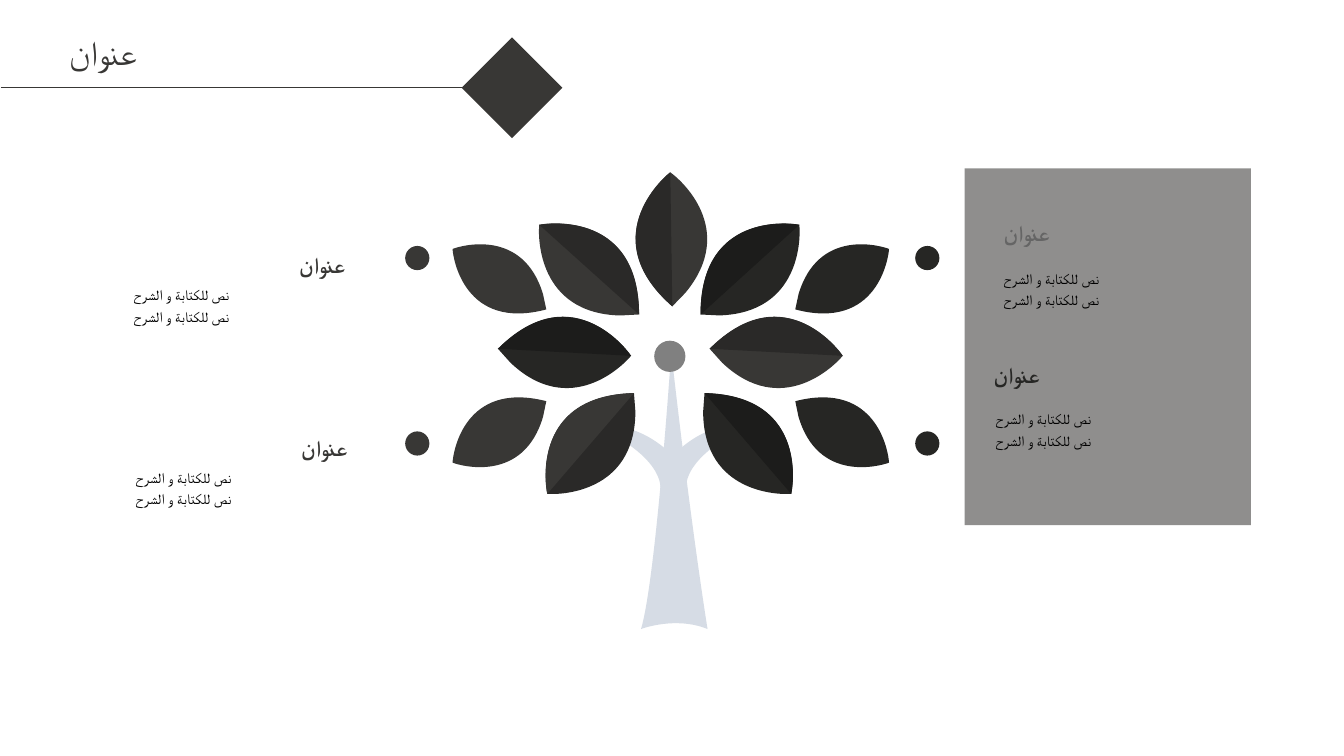
from lxml import etree
from pptx import Presentation
from pptx.dml.color import RGBColor
from pptx.enum.shapes import MSO_CONNECTOR, MSO_SHAPE
from pptx.enum.text import MSO_ANCHOR, MSO_AUTO_SIZE, PP_ALIGN
from pptx.oxml.ns import qn
from pptx.util import Inches, Pt

RECTANGLE, OVAL, DIAMOND = MSO_SHAPE.RECTANGLE, MSO_SHAPE.OVAL, MSO_SHAPE.DIAMOND
TOP, MIDDLE, BOTTOM = MSO_ANCHOR.TOP, MSO_ANCHOR.MIDDLE, MSO_ANCHOR.BOTTOM
LEFT, RIGHT, JUSTIFY = PP_ALIGN.LEFT, PP_ALIGN.RIGHT, PP_ALIGN.JUSTIFY

FONT = "Noto Sans CJK SC"
CHARCOAL = RGBColor(0x38, 0x37, 0x35)
CHARCOAL_FOLD = RGBColor(0x2A, 0x29, 0x28)
INK = RGBColor(0x26, 0x26, 0x24)
INK_FOLD = RGBColor(0x1C, 0x1C, 0x1B)
GREY = RGBColor(0x80, 0x80, 0x80)
MUTED = RGBColor(0x65, 0x65, 0x65)
TRUNK = RGBColor(0xD6, 0xDC, 0xE5)
BLACK = RGBColor(0, 0, 0)

HEADING = "عنوان"
BODY = ["نص للكتابة و الشرح"] * 2

# heading left, heading top, body left, body top, width, alignment, colour
NOTES = [
    (9.55, 3.53, 9.57, 3.99, 2.32, LEFT, INK),
    (9.65, 2.12, 9.65, 2.6, 2.32, LEFT, MUTED),
    (1.35, 4.25, 1.35, 4.57, 2.41, RIGHT, CHARCOAL),
    (1.33, 2.44, 1.33, 2.76, 2.41, RIGHT, CHARCOAL),
]

# start point, then straight (1 point) or curved (3 points) segments
TREE = [
    ((7.02, 6.24), [((7.02, 6.24), (6.86, 5.26), (6.66, 3.49)),
                    ((6.66, 3.49), (6.51, 5.74), (6.36, 6.24)),
                    ((6.36, 6.24), (6.7, 6.11), (7.02, 6.24))]),
    ((6.81, 4.86), [((6.81, 4.86), (6.73, 4.56), (7.42, 4.23)),
                    ((7.42, 4.23), (7.11, 4.14), (6.75, 4.45)),
                    ((6.81, 4.86),)]),
    ((6.55, 4.87), [((6.55, 4.87), (6.63, 4.57), (5.94, 4.24)),
                    ((5.94, 4.24), (6.25, 4.15), (6.61, 4.46)),
                    ((6.55, 4.87),)]),
]

# base, tip, side of the fold (1 left of the way to the tip), fill, fold fill
LEAVES = [
    ((6.67, 3.04), (6.65, 1.71), 1, CHARCOAL, CHARCOAL_FOLD),
    ((6.99, 3.9), (7.85, 4.9), 1, INK, INK_FOLD),
    ((6.29, 3.9), (5.43, 4.9), -1, CHARCOAL_FOLD, CHARCOAL),
    ((7.04, 3.46), (8.36, 3.53), 1, CHARCOAL, CHARCOAL_FOLD),
    ((4.94, 3.46), (6.26, 3.53), 1, INK, INK_FOLD),
    ((6.95, 3.12), (7.93, 2.23), 1, INK, INK_FOLD),
    ((6.34, 3.12), (5.35, 2.23), -1, CHARCOAL, CHARCOAL_FOLD),
    ((7.89, 3.98), (8.82, 4.59), 1, INK, None),
    ((5.42, 3.98), (4.49, 4.59), -1, CHARCOAL, None),
    ((7.89, 3.07), (8.82, 2.47), -1, INK, None),
    ((5.42, 3.07), (4.49, 2.47), 1, CHARCOAL, None),
]

# leaf outlines as (share of the length, offset towards the fold)
LEAF_OUTLINE = [((0.51, 0.56), (0.95, 0.07), (1, 0)),
                ((0.95, -0.07), (0.57, -0.5), (0.1, -0.1)),
                ((0, 0),)]
FOLD_OUTLINE = [((1, 0),), ((1, 0), (0.54, 0.6), (0, 0))]

CURVE_STEPS = 24


def paint(shape, colour):
    shape.shadow.inherit = False
    shape.fill.solid()
    shape.fill.fore_color.rgb = colour
    shape.line.fill.background()


def add_preset(page, kind, left, top, width, height, colour):
    shape = page.shapes.add_shape(kind, Inches(left), Inches(top), Inches(width), Inches(height))
    paint(shape, colour)
    return shape


def curve_points(start, first, second, end):
    for step in range(1, CURVE_STEPS + 1):
        t = step / CURVE_STEPS
        weights = ((1 - t) ** 3, 3 * t * (1 - t) ** 2, 3 * t * t * (1 - t), t ** 3)
        corners = (start, first, second, end)
        yield tuple(sum(w * c[axis] for w, c in zip(weights, corners)) for axis in (0, 1))


def add_outline(page, start, segments, colour):
    """Size a freeform by points along its curves, then give it the curves themselves."""
    points = [start]
    for segment in segments:
        points += segment if len(segment) == 1 else curve_points(points[-1], *segment)
    points = [(Inches(x), Inches(y)) for x, y in points]
    builder = page.shapes.build_freeform(*points[0])
    builder.add_line_segments(points[1:], close=True)
    shape = builder.convert_to_shape()
    paint(shape, colour)

    track = next(shape._element.iter(qn("a:path")))
    for step in list(track):
        track.remove(step)
    steps = [("a:moveTo", (start,))]
    steps += [("a:lnTo" if len(segment) == 1 else "a:cubicBezTo", segment) for segment in segments]
    for tag, corners in steps:
        step = etree.SubElement(track, qn(tag))
        for x, y in corners:
            etree.SubElement(step, qn("a:pt"), x=str(Inches(x) - shape.left),
                             y=str(Inches(y) - shape.top))
    etree.SubElement(track, qn("a:close"))


def add_leaf(page, base, tip, side, colour, fold_colour):
    dx, dy = tip[0] - base[0], tip[1] - base[1]

    def place(along, across):
        across *= side
        return base[0] + along * dx + across * dy, base[1] + along * dy - across * dx

    for outline, fill in ((LEAF_OUTLINE, colour), (FOLD_OUTLINE, fold_colour)):
        if fill is not None:
            segments = [tuple(place(*point) for point in segment) for segment in outline]
            add_outline(page, base, segments, fill)


def write(box, lines, frame_format, align, spacing, font_format, colour):
    frame = box.text_frame
    for name, value in frame_format.items():
        setattr(frame, name, value)
    for index, line in enumerate(lines):
        para = frame.add_paragraph() if index else frame.paragraphs[0]
        para.alignment, para.line_spacing = align, spacing
        span = para.add_run()
        span.text = line
        for name, value in font_format.items():
            setattr(span.font, name, value)
        span.font.color.rgb = colour


def add_note(page, heading_left, heading_top, body_left, body_top, width, align, colour):
    margins = {"margin_left": 0, "margin_top": 0, "margin_right": 0, "margin_bottom": 0}
    margins["margin_left" if align == LEFT else "margin_right"] = Inches(0.31)
    heading = page.shapes.add_textbox(
        Inches(heading_left), Inches(heading_top), Inches(width), Inches(0.32))
    write(heading, [HEADING], {**margins, "word_wrap": False, "vertical_anchor": BOTTOM},
          align, None, {"name": FONT, "size": Pt(16), "bold": True}, colour)
    body = page.shapes.add_textbox(
        Inches(body_left), Inches(body_top), Inches(width), Inches(0.51))
    write(body, BODY, {**margins, "word_wrap": True, "vertical_anchor": MIDDLE},
          LEFT, 1.2, {"name": FONT, "size": Pt(10.5)}, BLACK)


def add_header(page):
    diamond = add_preset(page, DIAMOND, 4.58, 0.37, 1, 1, CHARCOAL)
    rule = page.shapes.add_connector(
        MSO_CONNECTOR.STRAIGHT, Inches(0.01), Inches(0.87), Inches(4.58), Inches(0.87))
    rule.end_connect(diamond, 1)
    rule.line.color.rgb = CHARCOAL
    rule.line.width = Pt(0.5)
    etree.SubElement(rule._element.spPr, qn("a:effectLst"))

    title = page.shapes.title
    title.left, title.top, title.width, title.height = map(Inches, (0.59, 0.27, 3.82, 0.5))
    write(title, [HEADING],
          {"word_wrap": True, "vertical_anchor": TOP, "auto_size": MSO_AUTO_SIZE.SHAPE_TO_FIT_TEXT},
          JUSTIFY, None, {"name": FONT, "size": Pt(24)}, CHARCOAL)


def main():
    deck = Presentation()
    deck.slide_width, deck.slide_height = Inches(40 / 3), Inches(7.5)
    page = deck.slides.add_slide(deck.slide_layouts[5])

    panel = add_preset(page, RECTANGLE, 9.57, 1.67, 2.84, 3.54, CHARCOAL)
    panel_colour = panel._element.spPr.find(qn("a:solidFill"))[0]
    etree.SubElement(panel_colour, qn("a:alpha"), val="56000")

    for start, segments in TREE:
        add_outline(page, start, segments, TRUNK)
    for leaf in LEAVES:
        add_leaf(page, *leaf)
    add_preset(page, OVAL, 6.49, 3.38, 0.31, 0.31, GREY)
    for top in (2.44, 4.28):
        for left, colour in ((9.08, INK), (4.02, CHARCOAL)):
            add_preset(page, OVAL, left, top, 0.24, 0.24, colour)

    for note in NOTES:
        add_note(page, *note)
    add_header(page)
    deck.save("out.pptx")


if __name__ == "__main__":
    main()
